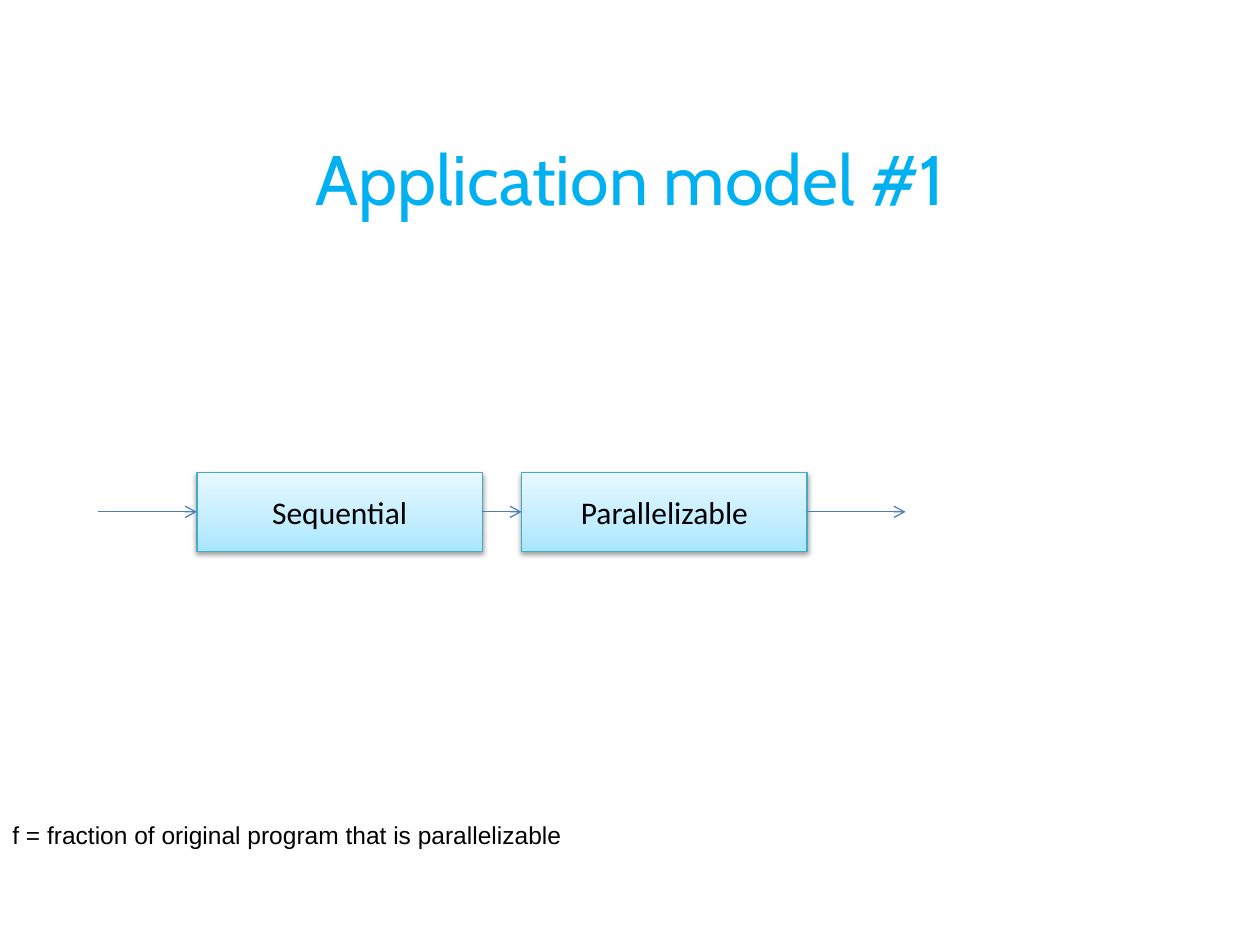
"""Build a slide showing a sequential stage followed by a parallelizable one."""
from copy import deepcopy

from lxml import etree
from pptx import Presentation
from pptx.dml.color import RGBColor
from pptx.enum import shapes, text
from pptx.oxml.ns import qn
from pptx.util import Pt

STAGES = ["Sequential", "Parallelizable"]
GRADIENT = [(0, "A7E6FF"), (0.35, "C1EDFF"), (1, "E7F8FF")]
TOP, LEFT, RIGHT = 0, 1, 3


def rgb(value):
    """Return the colour for a hex string."""
    return RGBColor.from_string(value)


def write(frame, words, *, font, size, color="000000", align=text.PP_ALIGN.CENTER,
          anchor=text.MSO_ANCHOR.MIDDLE, wrap=True):
    """Put formatted text in a frame."""
    frame.word_wrap = wrap
    frame.vertical_anchor = anchor
    paragraph = frame.paragraphs[0]
    paragraph.alignment = align
    run = paragraph.add_run()
    run.text = words
    run.font.name = font
    run.font.size = Pt(size)
    run.font.color.rgb = rgb(color)


def shade(stage):
    """Give a stage its vertical gradient."""
    stage.fill.gradient()
    stage.fill.gradient_angle = 90
    stop_list = stage._element.spPr.find(".//" + qn("a:gsLst"))
    stop_list.insert(1, deepcopy(stop_list[0]))
    for stop, (position, color) in zip(stage.fill.gradient_stops, GRADIENT):
        stop.position = position
        stop.color.rgb = rgb(color)


def cast_shadow(stage):
    """Give a stage a soft shadow below it."""
    stage.shadow.inherit = False
    effects = stage._element.spPr.find(qn("a:effectLst"))
    shadow = etree.SubElement(effects, qn("a:outerShdw"), blurRad=str(Pt(3.1)),
                              dist=str(Pt(1.6)), dir="5400000", rotWithShape="0")
    black = etree.SubElement(shadow, qn("a:srgbClr"), val="000000")
    etree.SubElement(black, qn("a:alpha"), val="38000")


def add_stage(slide, words, left, top, width, height):
    """Add one labelled stage of the program."""
    stage = slide.shapes.add_shape(shapes.MSO_SHAPE.RECTANGLE, Pt(left), Pt(top),
                                   Pt(width), Pt(height))
    shade(stage)
    stage.line.color.rgb = rgb("46AAC5")
    stage.line.width = Pt(0.75)
    cast_shadow(stage)
    write(stage.text_frame, words, font="Calibri", size=18)
    return stage


def add_arrow(slide, start, end, y, source=None, target=None):
    """Add a level arrow, joined to the stages it touches."""
    arrow = slide.shapes.add_connector(shapes.MSO_CONNECTOR.STRAIGHT, Pt(start), Pt(y),
                                       Pt(end), Pt(y))
    if source is not None:
        arrow.begin_connect(source, RIGHT)
    if target is not None:
        arrow.end_connect(target, LEFT)
    arrow.line.color.rgb = rgb("4B7EBC")
    arrow.line.width = Pt(0.75)
    properties = arrow._element.spPr
    etree.SubElement(properties.find(qn("a:ln")), qn("a:tailEnd"), type="arrow")
    etree.SubElement(properties, qn("a:effectLst"))


def add_title(slide, left, top, width, height):
    """Place and fill the title."""
    title = slide.shapes.title
    title.left, title.top, title.width, title.height = map(Pt, (left, top, width, height))
    write(title.text_frame, "Application model #1", font="Cabin", size=40, color="00B0F0")


def add_pipeline(slide, left, top, width, height):
    """Lay out the stages in a row with arrows in, between and out."""
    lead, gap = 56.25, 22.5
    count = len(STAGES)
    stage_width = (width - 2 * lead - (count - 1) * gap) / count
    middle = top + height / 2
    previous, start = None, left
    for index, words in enumerate(STAGES):
        stage_left = left + lead + index * (stage_width + gap)
        stage = add_stage(slide, words, stage_left, top, stage_width, height)
        add_arrow(slide, start, stage_left, middle, previous, stage)
        previous, start = stage, stage_left + stage_width
    add_arrow(slide, start, left + width, middle, previous)


def add_definition(slide, left, top, width, height):
    """Add the definition of f."""
    definition = slide.shapes.add_textbox(Pt(left), Pt(top), Pt(width), Pt(height))
    write(definition.text_frame, "f = fraction of original program that is parallelizable",
          font="Arial", size=14, align=text.PP_ALIGN.LEFT, anchor=text.MSO_ANCHOR.TOP,
          wrap=False)
    definition.text_frame.auto_size = text.MSO_AUTO_SIZE.SHAPE_TO_FIT_TEXT


def main():
    """Build and save the slide."""
    deck = Presentation()
    deck.slide_width, deck.slide_height = Pt(720), Pt(540)
    slide = deck.slides.add_slide(deck.slide_layouts[5])
    add_title(slide, 36, 56.25, 648, 90)
    add_pipeline(slide, 56.25, 270, 461.25, 45)
    add_definition(slide, 0, 465, 330, 24.25)
    deck.save("out.pptx")


if __name__ == "__main__":
    main()
